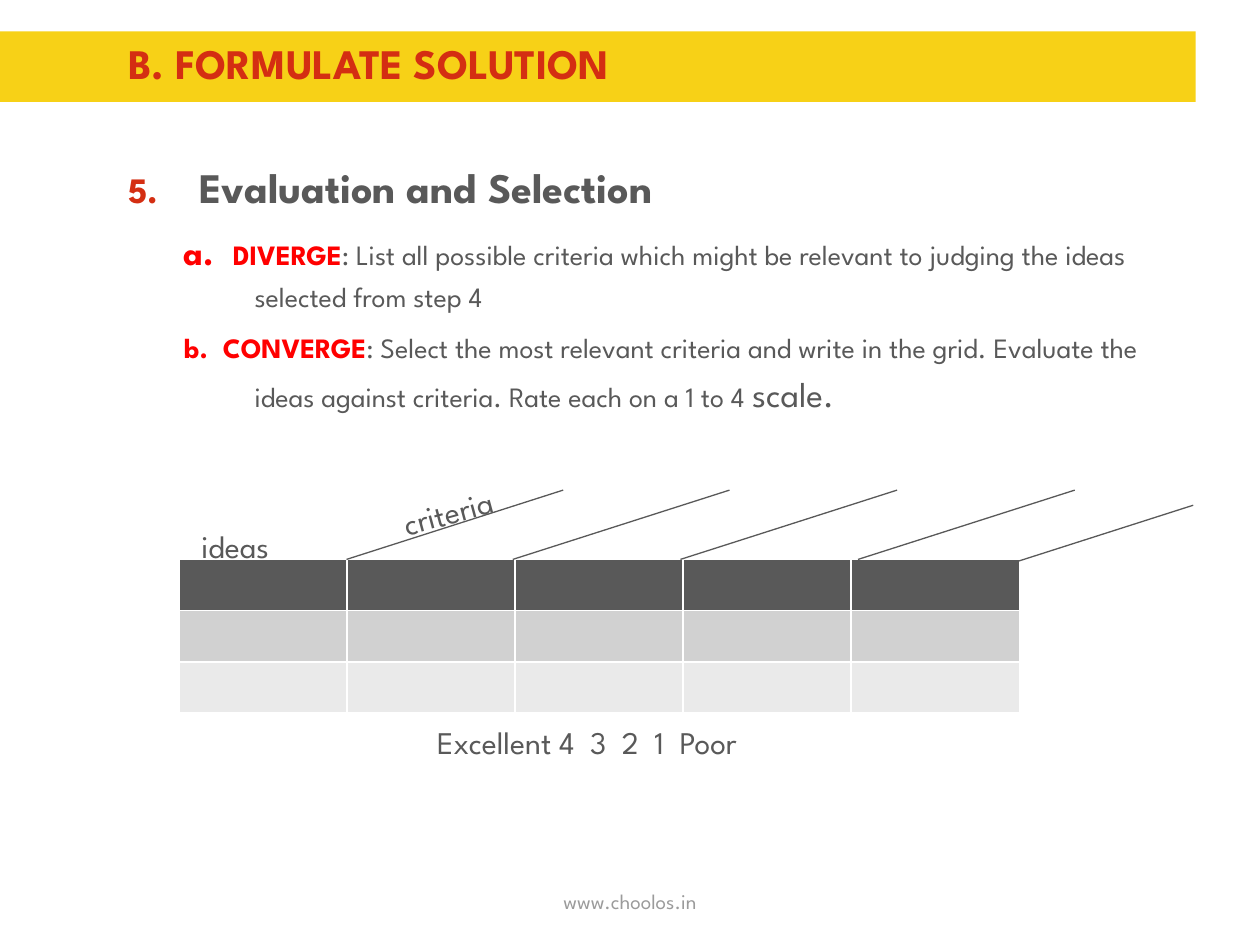
from lxml import etree
from pptx import Presentation
from pptx.dml.color import RGBColor
from pptx.enum.shapes import MSO_CONNECTOR, MSO_SHAPE
from pptx.enum.text import MSO_ANCHOR, PP_ALIGN
from pptx.oxml.ns import qn
from pptx.util import Inches, Pt

RECTANGLE = MSO_SHAPE.RECTANGLE
STRAIGHT = MSO_CONNECTOR.STRAIGHT
MIDDLE = MSO_ANCHOR.MIDDLE
CENTER = PP_ALIGN.CENTER

FONT = "League Spartan"
YELLOW, BRICK, RED = "F7D117", "D42E12", "FF0000"
DARK, LIGHT = "595959", "9B9B9B"
ROW_FILLS = (DARK, "D1D1D1", "EAEAEA")
COLUMN_COUNT = 5

LINE_STARTS = ((2.75, 4.44), (4.07, 4.44), (5.4, 4.44), (6.81, 4.44), (7.75, 4.56))
LINE_RUN, LINE_RISE = 1.72, 0.55

# Each run: text, size, colour, bold
HEADING = [("Evaluation and Selection", 24, DARK, True)]
STEPS = [
    [
        ("a.  ", 20, RED, True),
        ("DIVERGE", 16, RED, True),
        (": List all possible criteria which might be relevant to judging "
         "the ideas selected from step 4", 16, DARK, False),
    ],
    [
        ("b.  CONVERGE", 16, RED, True),
        (": Select the most relevant criteria and write in the grid. Evaluate "
         "the ideas against criteria. Rate each on a 1 to 4 ", 16, DARK, False),
        ("scale.", 20, DARK, False),
    ],
]


def color(hex_text):
    return RGBColor.from_string(hex_text)


def add_runs(para, runs):
    for text, size, hex_text, bold in runs:
        span = para.add_run()
        span.text = text
        span.font.name = FONT
        span.font.size = Pt(size)
        span.font.bold = bold
        span.font.color.rgb = color(hex_text)


def add_box(page, left, top, width, height, wrap=True, inset=True):
    box = page.shapes.add_textbox(Inches(left), Inches(top), Inches(width), Inches(height))
    frame = box.text_frame
    frame.word_wrap = wrap
    if not inset:
        frame.margin_left = frame.margin_right = 0
        frame.margin_top = frame.margin_bottom = 0
    return box


def add_label(page, text, left, top, width, rotation=0):
    box = add_box(page, left, top, width, 0.4, wrap=False)
    box.rotation = rotation
    add_runs(box.text_frame.paragraphs[0], [(text, 18, DARK, False)])


def add_band(page):
    band = page.shapes.add_shape(RECTANGLE, 0, Inches(0.25), Inches(9.49), Inches(0.56))
    band.shadow.inherit = False
    band.fill.solid()
    band.fill.fore_color.rgb = color(YELLOW)
    band.line.fill.background()


def add_number(para, start):
    """Number the paragraph automatically, from the given start."""
    props = para._p.get_or_add_pPr()
    bullet_color = etree.SubElement(props, qn("a:buClr"))
    etree.SubElement(bullet_color, qn("a:srgbClr"), val=BRICK)
    etree.SubElement(props, qn("a:buSzPct"), val="85000")
    etree.SubElement(props, qn("a:buFont"), typeface=FONT)
    etree.SubElement(props, qn("a:buAutoNum"), type="arabicPeriod", startAt=str(start))


def format_step(para, left):
    """Set a hanging indent and the spacing shared by the body paragraphs."""
    props = para._p.get_or_add_pPr()
    props.set("marL", str(Inches(left)))
    props.set("indent", str(-Inches(0.56)))
    para.line_spacing = 1.2
    para.space_after = Pt(6)


def add_body(page):
    frame = add_box(page, 1.02, 1.2, 8.48, 2.31, inset=False).text_frame
    heading = frame.paragraphs[0]
    add_number(heading, 5)
    format_step(heading, 0.56)
    add_runs(heading, HEADING)
    for runs in STEPS:
        para = frame.add_paragraph()
        para.level = 1
        format_step(para, 1)
        add_runs(para, runs)


def add_grid(page):
    table = page.shapes.add_table(
        len(ROW_FILLS), COLUMN_COUNT,
        Inches(1.42), Inches(4.44), Inches(6.67), Inches(1.22),
    ).table
    for row, fill in zip(table.rows, ROW_FILLS):
        for cell in row.cells:
            cell.fill.solid()
            cell.fill.fore_color.rgb = color(fill)


def add_slanted_line(page, left, bottom):
    line = page.shapes.add_connector(
        STRAIGHT, Inches(left), Inches(bottom),
        Inches(left + LINE_RUN), Inches(bottom - LINE_RISE),
    )
    line.line.color.rgb = color(DARK)
    line.line.width = Pt(0.75)
    etree.SubElement(line._element.spPr, qn("a:effectLst"))


def add_footer(page):
    frame = add_box(page, 3.31, 6.95, 3.38, 0.4).text_frame
    frame.vertical_anchor = MIDDLE
    para = frame.paragraphs[0]
    para.alignment = CENTER
    add_runs(para, [("www.choolos.in", 12, LIGHT, False)])


def main():
    deck = Presentation()
    deck.slide_width, deck.slide_height = Inches(10), Inches(7.5)
    page = deck.slides.add_slide(deck.slide_layouts[6])

    add_band(page)
    title = add_box(page, 1.02, 0.3, 8.48, 1.25, inset=False)
    add_runs(title.text_frame.paragraphs[0], [("B. FORMULATE SOLUTION", 24, BRICK, True)])
    add_body(page)
    add_grid(page)
    for left, bottom in LINE_STARTS:
        add_slanted_line(page, left, bottom)
    add_label(page, "criteria", 3.1, 3.86, 0.96, rotation=344.8)
    add_label(page, "ideas", 1.5, 4.13, 0.81)
    add_label(page, "Excellent 4  3  2  1  Poor", 3.37, 5.69, 2.95)
    add_footer(page)

    deck.save("out.pptx")


if __name__ == "__main__":
    main()
